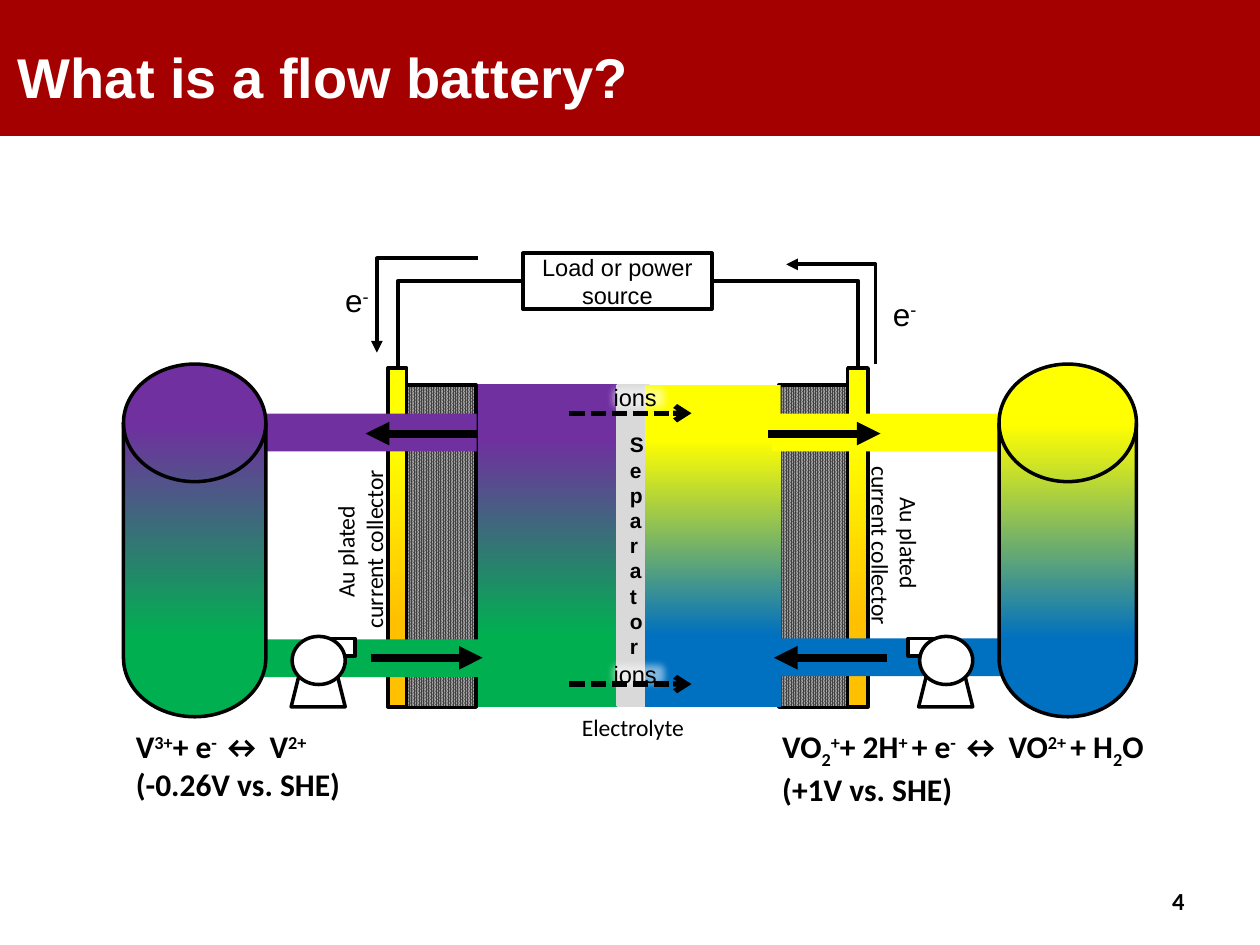
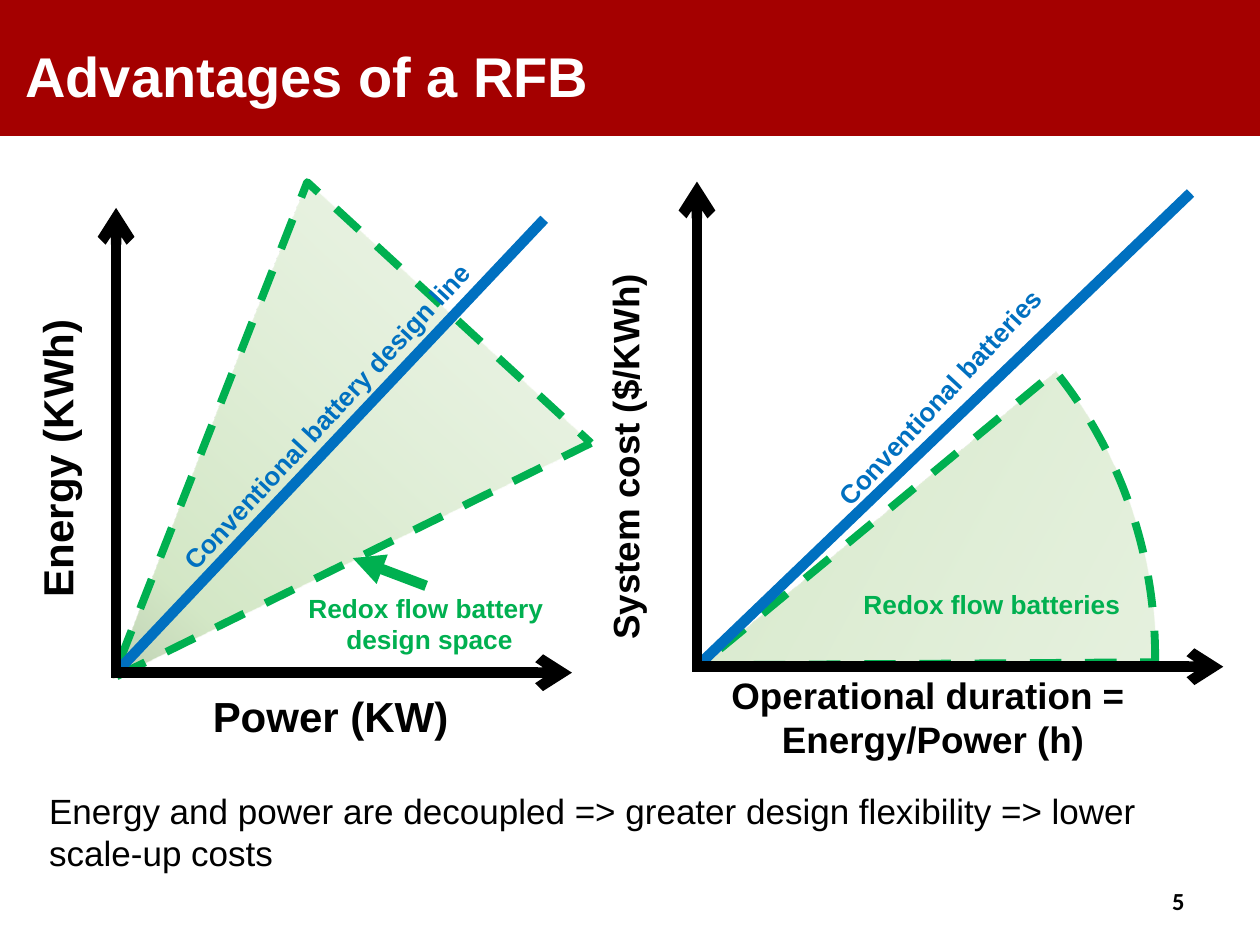
from dataclasses import dataclass
from lxml import etree
from pptx import Presentation
from pptx.dml.color import RGBColor
from pptx.enum.dml import MSO_LINE, MSO_PATTERN
from pptx.enum.shapes import MSO_CONNECTOR, MSO_SHAPE
from pptx.enum.text import MSO_ANCHOR, PP_ALIGN
from pptx.oxml.ns import qn
from pptx.util import Cm, Pt

RECT, TANK, TRAPEZOID = MSO_SHAPE.RECTANGLE, MSO_SHAPE.FLOWCHART_MAGNETIC_DISK, MSO_SHAPE.TRAPEZOID
WHEEL, TRIANGLE, PIE = MSO_SHAPE.FLOWCHART_CONNECTOR, MSO_SHAPE.ISOSCELES_TRIANGLE, MSO_SHAPE.PIE
STRAIGHT, ELBOW = MSO_CONNECTOR.STRAIGHT, MSO_CONNECTOR.ELBOW
DASH, SHORT_DASH = MSO_LINE.DASH, MSO_LINE.SQUARE_DOT
LEFT, CENTER, RIGHT = PP_ALIGN.LEFT, PP_ALIGN.CENTER, PP_ALIGN.RIGHT
TOP, MIDDLE = MSO_ANCHOR.TOP, MSO_ANCHOR.MIDDLE
PERCENT_90 = MSO_PATTERN.PERCENT_90


@dataclass(frozen=True)
class Theme:
    band: str = "A40000"
    white: str = "FFFFFF"
    black: str = "000000"
    separator: str = "D9D9D9"
    felt: tuple = ("404040", "A6A6A6")
    purple: str = "7030A0"
    green: str = "00B050"
    yellow: str = "FFFF00"
    gold: str = "FFC000"
    blue: str = "0070C0"
    design_space: tuple = ((0, "E2F0D9", 50), (37, "C5E0B4", 50), (66, "A9D18E", 50), (100, "385723", 50))
    sans: str = "Arial"
    body: str = "Calibri"
    title: float = 32
    axis: float = 24
    axis_small: float = 21
    summary: float = 20
    equation: float = 18
    series: float = 15
    number: float = 14
    label: float = 13.5
    separator_text: float = 12


theme = Theme()


def put(slide, box, kind=None, fill=None, line=None, width=2, dash=None, text=(), size=theme.label,
        font=theme.sans, color=theme.black, bold=False, align=LEFT, anchor=TOP, rotation=0):
    place = [Cm(v) for v in box]
    part = slide.shapes.add_textbox(*place) if kind is None else slide.shapes.add_shape(kind, *place)
    part.rotation = rotation
    if kind is not None:
        part.shadow.inherit = False
        if isinstance(fill, tuple):
            part.fill.gradient()
            part.fill.gradient_angle = 90 if fill == theme.design_space else 270
            stops = part._element.spPr.find(".//" + qn("a:gsLst"))
            stops.clear()
            for position, tone, alpha in fill:
                stop = etree.SubElement(stops, qn("a:gs"), pos=str(position * 1000))
                rgb = etree.SubElement(stop, qn("a:srgbClr"), val=tone)
                etree.SubElement(rgb, qn("a:alpha"), val=str(alpha * 1000))
        elif fill:
            part.fill.solid()
            part.fill.fore_color.rgb = RGBColor.from_string(fill)
        else:
            part.fill.background()
        if line:
            part.line.color.rgb = RGBColor.from_string(line)
            part.line.width = Pt(width)
            part.line.dash_style = dash
        else:
            part.line.fill.background()
    frame = part.text_frame
    frame.word_wrap = True
    frame.vertical_anchor = anchor
    for index, runs in enumerate(text):
        paragraph = frame.paragraphs[0] if index == 0 else frame.add_paragraph()
        paragraph.alignment = align
        for words, baseline in [(runs, 0)] if isinstance(runs, str) else runs:
            run = paragraph.add_run()
            run.text = words
            for name, value in {"size": Pt(size), "name": font, "bold": bold}.items():
                setattr(run.font, name, value)
            run.font.color.rgb = RGBColor.from_string(color)
            if baseline:
                run.font._element.set("baseline", str(baseline * 1000))
    return part


def connect(slide, start, end, color=theme.black, width=2.25, head=None, tail=None, dash=None, bent=False):
    link = slide.shapes.add_connector(ELBOW if bent else STRAIGHT, *[Cm(v) for v in (*start, *end)])
    link.line.color.rgb = RGBColor.from_string(color)
    link.line.width = Pt(width)
    link.line.dash_style = dash
    properties = link._element.spPr
    if bent:
        properties.find(qn("a:prstGeom")).set("prst", "bentConnector2")
    outline = link.line._get_or_add_ln()
    for tag, tip in (("a:headEnd", head), ("a:tailEnd", tail)):
        if tip:
            etree.SubElement(outline, qn(tag), type=tip)
    etree.SubElement(properties, qn("a:effectLst"))


prs = Presentation()
prs.slide_width, prs.slide_height = Cm(25.4), Cm(19.05)
title_only = prs.slide_layouts[5]

slides = []
for number, heading, box, inset in (
        (4, "What is a flow battery?", (0.18, 0.15, 21.9, 2.77), 0.18),
        (5, "Advantages of a RFB", (0.36, 0.48, 16.43, 2.08), 0.15)):
    slide = prs.slides.add_slide(title_only)
    title = slide.shapes.title
    title.left, title.top, title.width, title.height = [Cm(v) for v in box]
    title.text = heading
    frame = title.text_frame
    frame.vertical_anchor = MIDDLE
    frame.margin_left = frame.margin_right = Cm(inset)
    frame.margin_top = frame.margin_bottom = Cm(0.1)
    frame.paragraphs[0].alignment = LEFT
    title_font = frame.paragraphs[0].runs[0].font
    for name, value in {"size": Pt(theme.title), "name": theme.sans, "bold": True}.items():
        setattr(title_font, name, value)
    title_font.color.rgb = RGBColor.from_string(theme.white)
    put(slide, (18.21, 17.65, 5.92, 1.02), text=[str(number)], size=theme.number,
        font=theme.body, bold=True, align=RIGHT, anchor=MIDDLE)
    slides.append(slide)

battery, advantages = slides
band = put(battery, (0, 0, 25.4, 2.74), RECT, theme.band)
title_only.shapes._spTree.insert(2, band._element)

negative = ((17, theme.purple, 100), (78, theme.green, 100))
positive = ((17, theme.yellow, 100), (78, theme.blue, 100))
gold_plate = ((22, theme.yellow, 100), (75, theme.gold, 100))

for left in (8.2, 15.7):
    felt = put(battery, (left, 7.76, 1.4, 6.5), RECT, line=theme.black)
    felt.fill.patterned()
    felt.fill.pattern = PERCENT_90
    felt.fill.fore_color.rgb, felt.fill.back_color.rgb = [RGBColor.from_string(c) for c in theme.felt]

put(battery, (9.63, 7.75, 2.82, 6.5), RECT, negative)
put(battery, (12.45, 7.77, 0.61, 6.45), RECT, theme.separator, theme.separator, text=["Separator"],
    size=theme.separator_text, bold=True, align=CENTER, anchor=MIDDLE)
put(battery, (13, 7.77, 2.74, 6.48), RECT, positive)
put(battery, (10.54, 5.11, 3.81, 1.12), RECT, line=theme.black, width=2.25,
    text=["Load or power source"], align=CENTER, anchor=MIDDLE)

for start, end, head, tail in (
        ((10.54, 5.66), (8.03, 7.42), None, None),
        ((14.35, 5.66), (17.3, 7.42), None, None),
        ((9.63, 5.21), (7.6, 7.11), None, "triangle"),
        ((15.85, 5.33), (17.65, 7.34), "triangle", None)):
    connect(battery, start, end, head=head, tail=tail, bent=True)
for left, top in ((6.71, 5.54), (17.75, 5.82)):
    put(battery, (left, top, 1.02, 1.02), text=[[("e", 0), ("-", 30)]], size=theme.equation)

for left, width in ((7.82, 0.38), (17.09, 0.41)):
    put(battery, (left, 7.42, width, 6.83), RECT, gold_plate, theme.black)
for left, top, length, tone in (
        (15.56, 8.34, 6.53, theme.yellow), (3.29, 8.34, 6.32, theme.purple),
        (3.31, 12.89, 6.43, theme.green), (15.56, 12.87, 6.53, theme.blue)):
    put(battery, (left, top, length, 0.76), RECT, tone)
for left, width, electrolyte in ((20.14, 2.77, positive), (2.49, 2.87, negative)):
    put(battery, (left, 7.34, width, 7.11), TANK, electrolyte, theme.black)

for pump_left, outlet_left in ((5.87, 6.55), (18.52, 18.31)):
    for kind, box in ((TRAPEZOID, (pump_left, 13.31, 1.09, 0.94)),
                      (RECT, (outlet_left, 12.87, 0.61, 0.36)),
                      (WHEEL, (pump_left + 0.02, 12.83, 1.07, 0.97))):
        put(battery, box, kind, theme.white, theme.black)

put(battery, (11.48, 14.25, 2.62, 0.84), text=["Electrolyte"], font=theme.body)
for left, top, turn in ((5.38, 10.36, 270), (16.15, 10.29, 90)):
    put(battery, (left, top, 3.76, 1.42), text=["Au plated ", "current collector"],
        font=theme.body, align=CENTER, rotation=turn)

vanadyl = [[("VO", 0), ("2", -25), ("+", 30), ("+ 2H", 0), ("+ ", 30), ("+ e", 0), ("- ", 30), ("↔ VO", 0),
            ("2+ ", 30), ("+ H", 0), ("2", -25), ("O (+1V vs. SHE)", 0)]]
vanadium = [[("V", 0), ("3+", 30), ("+ e", 0), ("- ", 30), ("↔ V", 0), ("2+", 30)], "(-0.26V vs. SHE)"]
for left, width, reaction in ((15.52, 8.79, vanadyl), (2.49, 6.32, vanadium)):
    put(battery, (left, 14.53, width, 1.8), text=reaction, size=theme.equation, font=theme.body, bold=True)

for start, end, level in ((7.47, 9.73, 13.26), (9.63, 7.37, 8.74), (17.88, 15.6, 13.26), (15.49, 17.75, 8.74)):
    connect(battery, (start, level), (end, level), width=4.5, tail="triangle")
for top, level in ((7.59, 8.33), (13.18, 13.79)):
    ions = put(battery, (12.12, top, 1.5, 0.84), RECT, theme.white, text=["ions"])
    haze = ions._element.spPr.find(".//" + qn("a:srgbClr"))
    etree.SubElement(haze, qn("a:alpha"), val="50000")
    effects = ions._element.spPr.find(qn("a:effectLst"))
    etree.SubElement(effects, qn("a:softEdge"), rad="63500")
    connect(battery, (11.48, level), (13.94, level), width=3, tail="arrow", dash=SHORT_DASH)

put(advantages, (1.78, 4.98, 7.77, 10.01), TRIANGLE, theme.design_space, theme.green, 4.5, DASH, rotation=222.6)
sector = put(advantages, (4.8, 4.29, 18.64, 18.24), PIE, theme.design_space, theme.green, 4.5, DASH, rotation=118.7)
sector.adjustments[0], sector.adjustments[1] = 71.44, 95
sector._element.spPr.find(qn("a:xfrm")).set("flipV", "1")

for x, y, trend_end, right, top in (
        (2.34, 13.56, (10.97, 4.42), 11.53, 4.19),
        (14.05, 13.44, (24, 3.89), 24.66, 3.66)):
    connect(advantages, (x, y), trend_end, theme.blue, 6)
    connect(advantages, (x, y), (right, y), width=6, tail="arrow")
    connect(advantages, (x, y + 0.1), (x, top), width=6, tail="arrow")
connect(advantages, (8.59, 11.81), (7.11, 11.25), theme.green, 6, tail="triangle")

for box, words, size, tone, align, turn in (
        ((4.04, 13.79, 5.92, 1.4), ["Power (KW)"], theme.axis, theme.black, LEFT, 0),
        ((-2.16, 8.2, 6.76, 1.42), ["Energy (KWh)"], theme.axis, theme.black, LEFT, 270),
        ((2.13, 7.59, 9.6, 0.99), ["Conventional battery design line"], theme.series, theme.blue, LEFT, 312.9),
        ((5.64, 11.81, 5.89, 1.68), ["Redox flow battery", " design space"], theme.series, theme.green, CENTER, 0),
        ((13.21, 13.44, 11.2, 2.36), ["Operational duration = ", "Energy/Power (h)"],
         theme.axis_small, theme.black, CENTER, 0),
        ((8.2, 7.85, 9.12, 1.47), ["System cost ($/KWh)"], theme.axis_small, theme.black, LEFT, 270),
        ((15.77, 7.16, 7.19, 1.14), ["Conventional batteries"], theme.series, theme.blue, LEFT, 312.9),
        ((16.31, 11.73, 7.37, 1.02), ["Redox flow batteries"], theme.series, theme.green, CENTER, 0)):
    put(advantages, box, text=words, size=size, color=tone, bold=True, align=align, rotation=turn)

put(advantages, (0.74, 15.8, 23.04, 2.08), size=theme.summary,
    text=["Energy and power are decoupled => greater design flexibility => lower scale-up costs"])

prs.save("out.pptx")
